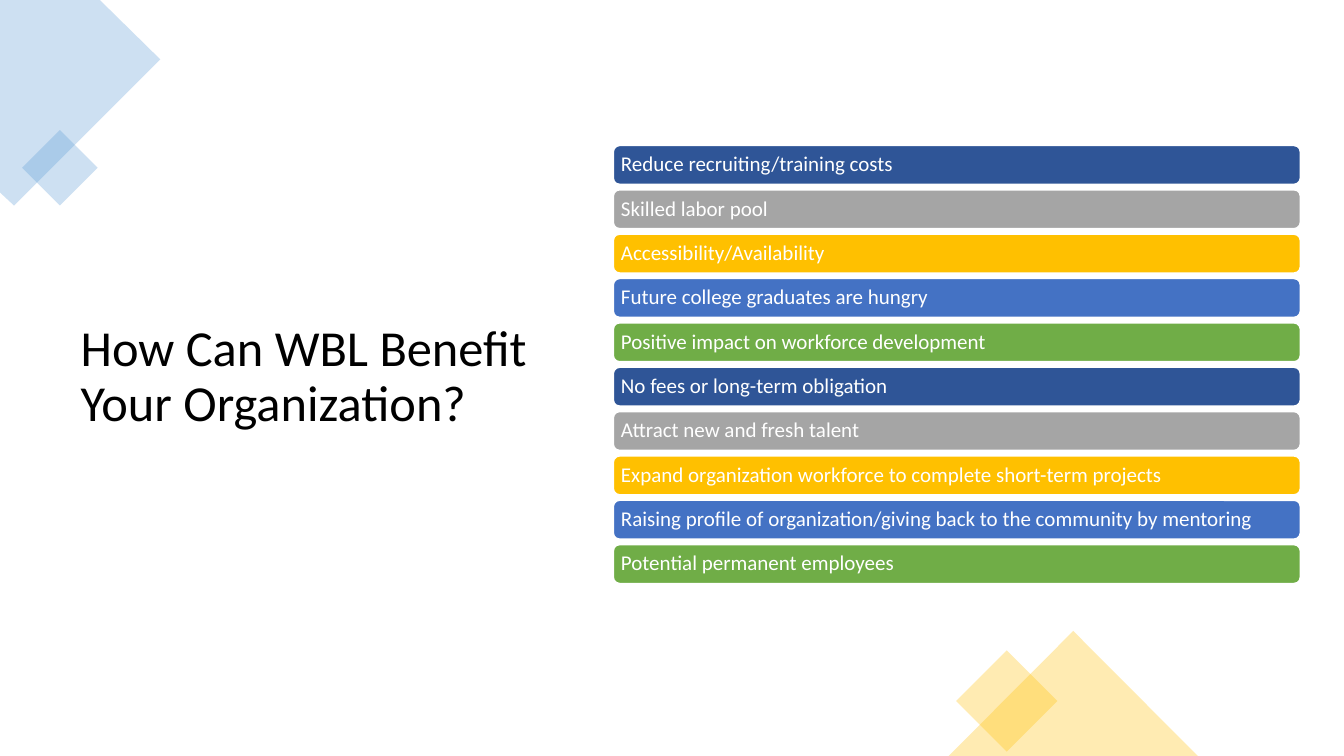
from lxml import etree
from pptx import Presentation
from pptx.dml.color import RGBColor
from pptx.enum.shapes import MSO_SHAPE
from pptx.enum.text import MSO_ANCHOR, PP_ALIGN
from pptx.oxml.ns import qn
from pptx.util import Inches, Pt

RECTANGLE = MSO_SHAPE.RECTANGLE
TRIANGLE = MSO_SHAPE.ISOSCELES_TRIANGLE
ROUNDED = MSO_SHAPE.ROUNDED_RECTANGLE
MIDDLE = MSO_ANCHOR.MIDDLE
LEFT = PP_ALIGN.LEFT

FONT = "Calibri"
WHITE, BLACK = "FFFFFF", "000000"
PALE_BLUE, YELLOW = "5B9BD5", "FFC000"
BAR_COLORS = ["2F5597", "A5A5A5", YELLOW, "4472C4", "70AD47"]
BAR_SHARE = 0.89
BENEFITS = [
    "Reduce recruiting/training costs",
    "Skilled labor pool",
    "Accessibility/Availability",
    "Future college graduates are hungry",
    "Positive impact on workforce development",
    "No fees or long-term obligation",
    "Attract new and fresh talent",
    "Expand organization workforce to complete short-term projects",
    "Raising profile of organization/giving back to the community by mentoring",
    "Potential permanent employees",
]


def color(hex_value):
    """Turn a hex string into a colour."""
    return RGBColor.from_string(hex_value)


def fill_shape(shape, hex_value, opacity=100):
    """Give a shape a flat fill, with no shadow or outline."""
    shape.shadow.inherit = False
    shape.line.fill.background()
    shape.fill.solid()
    shape.fill.fore_color.rgb = color(hex_value)
    if opacity < 100:
        solid_fill = shape._element.spPr.find(qn("a:solidFill"))
        alpha = etree.SubElement(solid_fill[0], qn("a:alpha"))
        alpha.set("val", str(opacity * 1000))


def write_text(shape, text, size, hex_value):
    """Write one left-aligned paragraph, centred vertically."""
    frame = shape.text_frame
    frame.text = text
    frame.word_wrap = True
    frame.vertical_anchor = MIDDLE
    paragraph = frame.paragraphs[0]
    paragraph.alignment = LEFT
    paragraph.line_spacing = 0.9
    font = paragraph.runs[0].font
    font.name, font.size = FONT, Pt(size)
    font.color.rgb = color(hex_value)


def place_title(slide, box):
    """Place the slide title in its box."""
    title = slide.shapes.title
    title.left, title.top, title.width, title.height = map(Inches, box)
    write_text(title, "How Can WBL Benefit Your Organization?", 36, BLACK)


def add_diamond(slide, left, top, side, hex_value):
    """Add a translucent square standing on its corner."""
    box = map(Inches, (left, top, side, side))
    diamond = slide.shapes.add_shape(RECTANGLE, *box)
    diamond.rotation = 45
    fill_shape(diamond, hex_value, 30)


def add_blue_corner(slide, left, top):
    """Add the cropped blue diamond and its small companion."""
    outline = [(0.99, 0), (1.59, 0.59), (0.14, 2.04), (0, 1.91)]
    builder = slide.shapes.build_freeform(Inches(left), Inches(top), 1)
    builder.add_line_segments(
        [(Inches(left + x), Inches(top + y)) for x, y in outline])
    fill_shape(builder.convert_to_shape(), PALE_BLUE, 30)
    add_diamond(slide, left + 0.33, top + 1.4, 0.53, PALE_BLUE)


def add_yellow_corner(slide, left, top, width, height):
    """Add the yellow triangle and the diamond that overlaps it."""
    add_diamond(slide, left + 0.22, top + 0.34, 0.71, YELLOW)
    box = map(Inches, (left, top, width, height))
    fill_shape(slide.shapes.add_shape(TRIANGLE, *box), YELLOW, 30)


def add_benefits(slide, left, top, width, height):
    """Stack one coloured bar per benefit in equal rows of the box."""
    pitch = height / len(BENEFITS)
    for row, benefit in enumerate(BENEFITS):
        box = map(Inches, (left, top + row * pitch, width, pitch * BAR_SHARE))
        bar = slide.shapes.add_shape(ROUNDED, *box)
        fill_shape(bar, BAR_COLORS[row % len(BAR_COLORS)])
        bar.line.color.rgb = color(WHITE)
        bar.line.width = Pt(1.5)
        frame = bar.text_frame
        frame.margin_left = frame.margin_right = Inches(0.06)
        frame.margin_top = frame.margin_bottom = Inches(0.06)
        write_text(bar, benefit, 15, WHITE)


def main():
    """Build and save the slide."""
    presentation = Presentation()
    presentation.slide_width = Inches(13.33)
    presentation.slide_height = Inches(7.5)
    slide = presentation.slides.add_slide(presentation.slide_layouts[5])
    place_title(slide, (0.7, 0.7, 5.25, 6.09))
    add_blue_corner(slide, 0, 0)
    add_yellow_corner(slide, 9.41, 6.26, 2.47, 1.24)
    add_benefits(slide, 6.08, 1.44, 6.82, 4.4)
    presentation.save("out.pptx")


if __name__ == "__main__":
    main()
